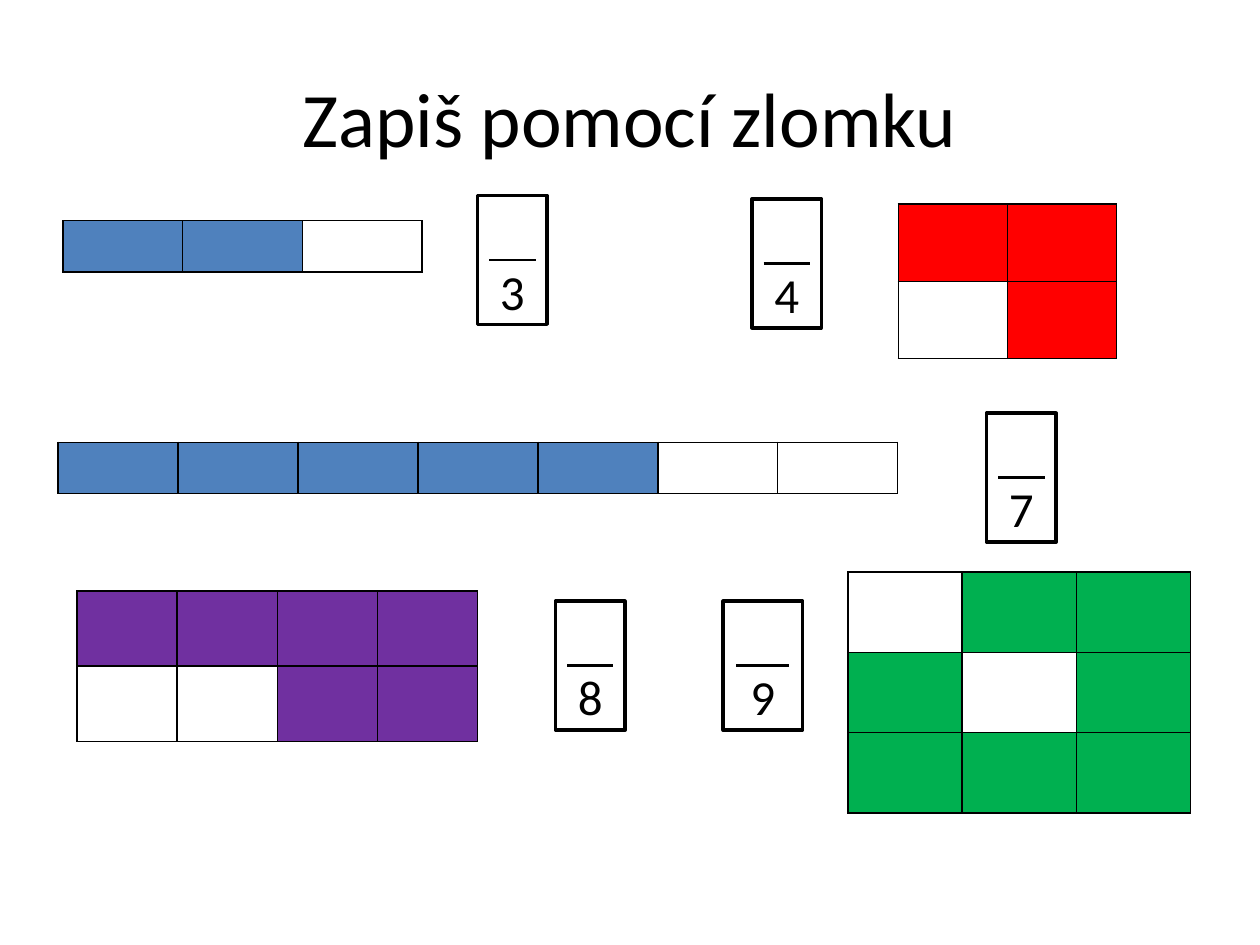
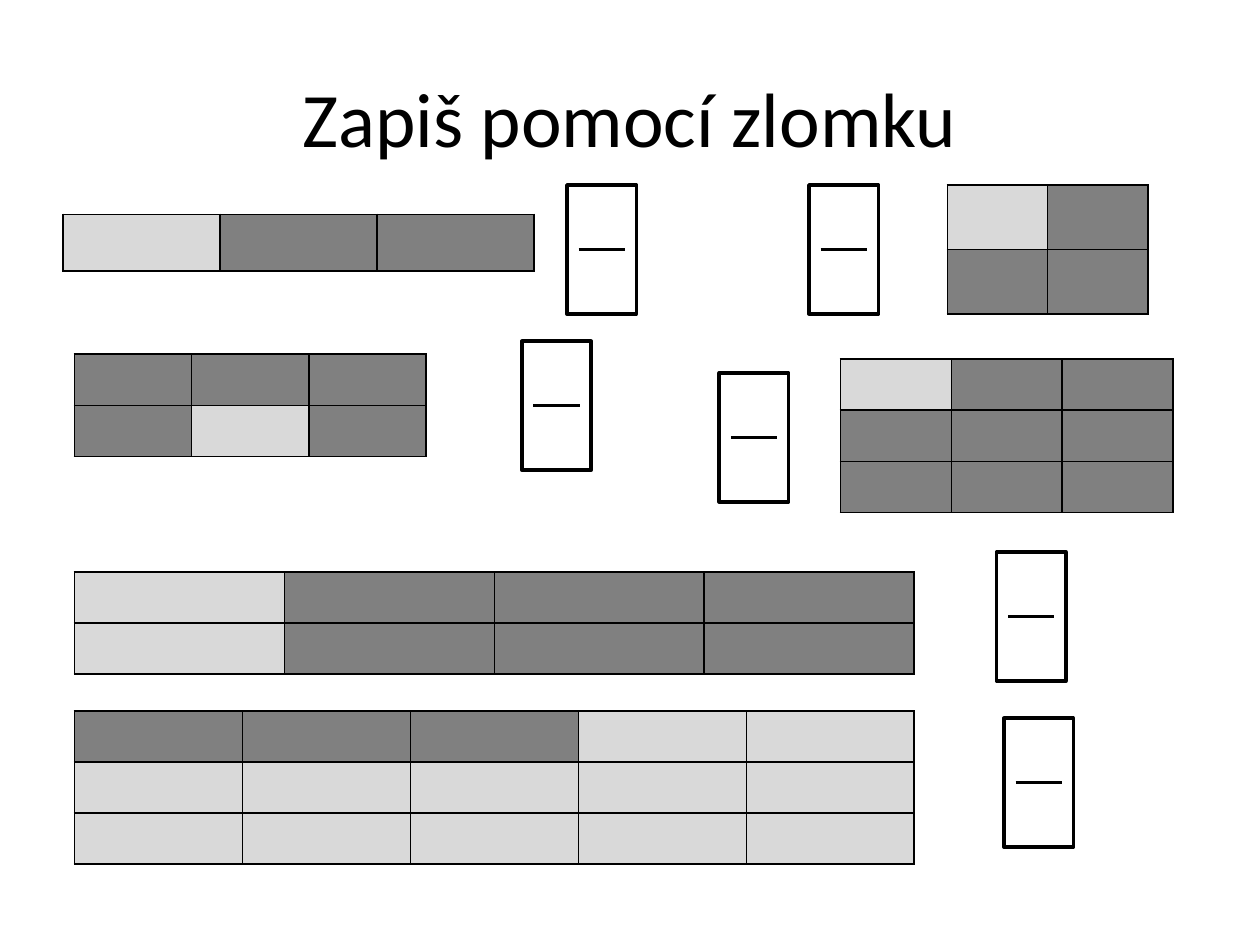
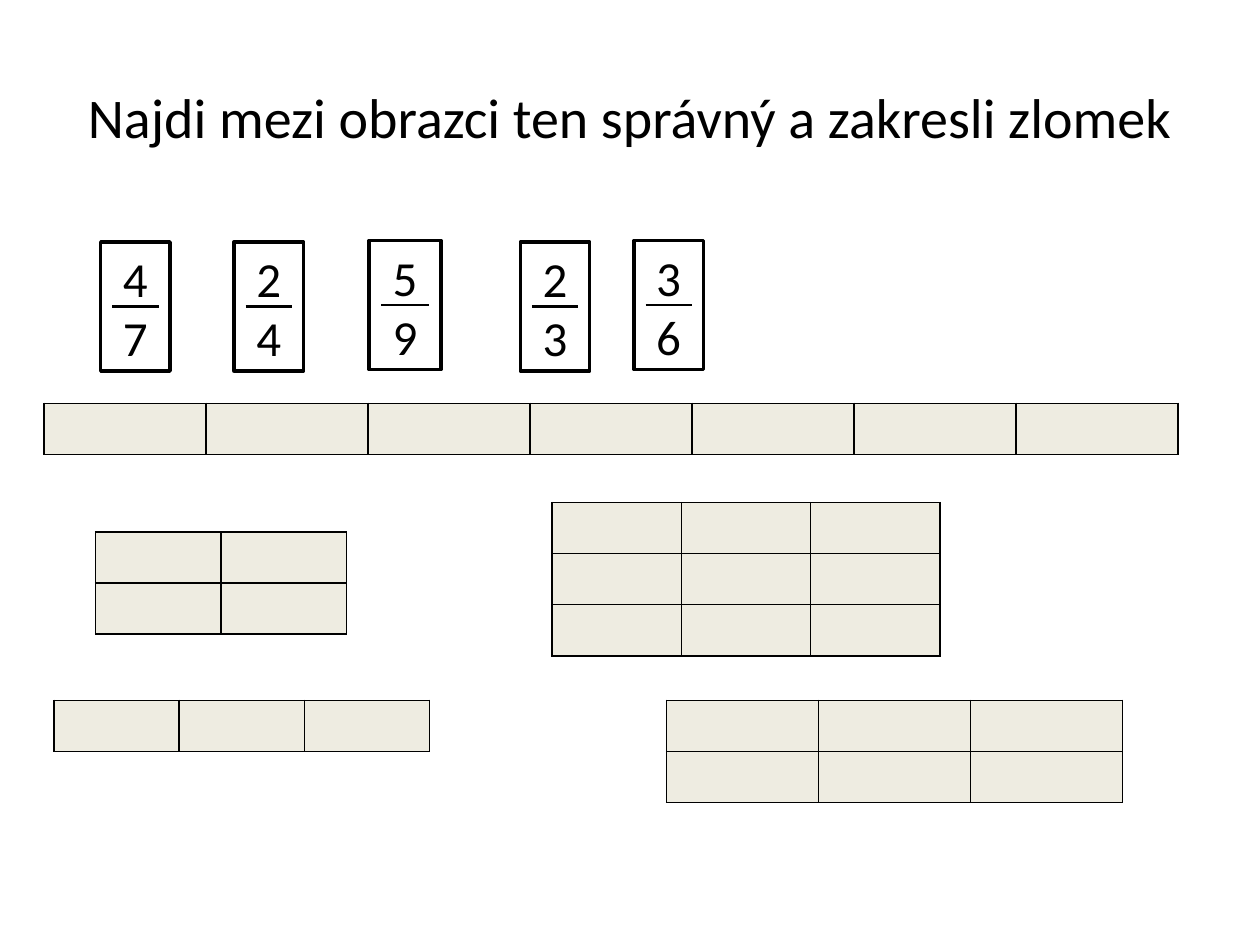
from pptx import Presentation
from pptx.dml.color import RGBColor
from pptx.enum.shapes import MSO_CONNECTOR, MSO_SHAPE
from pptx.enum.text import MSO_ANCHOR, PP_ALIGN
from pptx.oxml.ns import qn
from pptx.util import Cm, Pt
from lxml.etree import SubElement

FONT = "Calibri"
COLORS = {
    "black": "000000", "white": "FFFFFF", "blue": "4F81BD", "red": "FF0000",
    "purple": "7030A0", "green": "00B050", "dark": "808080", "light": "D9D9D9",
    "cream": "EEECE1",
}
ROW_H = 1.03            # usual height of a grid row, cm
BOX_W, BOX_H = 1.4, 2.6  # fraction box, cm


def rgb(name):
    return RGBColor.from_string(COLORS[name])


def add_run(p, text, size):
    p.alignment = PP_ALIGN.CENTER
    r = p.add_run()
    r.text = text
    r.font.name = FONT
    r.font.size = Pt(size)
    r.font.color.rgb = rgb("black")


def add_slide(prs, title, size=44):
    s = prs.slides.add_slide(prs.slide_layouts[5])
    sp = s.shapes.title
    sp.left, sp.top, sp.width, sp.height = Cm(1.27), Cm(0.76), Cm(22.86), Cm(3.18)
    tf = sp.text_frame
    tf.word_wrap = True
    tf.vertical_anchor = MSO_ANCHOR.MIDDLE
    add_run(tf.paragraphs[0], title, size)
    return s


def set_borders(cell):
    tcPr = cell._tc.get_or_add_tcPr()
    for side in ("a:lnL", "a:lnR", "a:lnT", "a:lnB"):
        ln = SubElement(tcPr, qn(side), w=str(Pt(1)))
        fill = SubElement(ln, qn("a:solidFill"))
        SubElement(fill, qn("a:srgbClr"), val=COLORS["black"])


def add_grid(s, x, y, w, pattern, on, off="white", row_h=ROW_H):
    """Draw a table from rows such as "##.", where # is a coloured part."""
    rows = pattern.split()
    n = len(rows[0])
    table = s.shapes.add_table(len(rows), n, Cm(x), Cm(y), Cm(w),
                               Cm(row_h * len(rows))).table
    table.first_row = table.horz_banding = False
    for col in table.columns:
        col.width = Cm(w / n)
    for i, marks in enumerate(rows):
        table.rows[i].height = Cm(row_h)
        for j, mark in enumerate(marks):
            cell = table.cell(i, j)
            set_borders(cell)
            cell.fill.solid()
            cell.fill.fore_color.rgb = rgb(on if mark == "#" else off)


def add_fraction(s, x, y, numbers="", w=BOX_W):
    """Draw a box with a fraction bar; numbers stand from the bottom up."""
    group = s.shapes.add_group_shape()
    sp = group.shapes.add_shape(MSO_SHAPE.RECTANGLE, Cm(x), Cm(y), Cm(w), Cm(BOX_H))
    sp.shadow.inherit = False
    sp.fill.solid()
    sp.fill.fore_color.rgb = rgb("white")
    sp.line.color.rgb = rgb("black")
    sp.line.width = Pt(2)
    tf = sp.text_frame
    tf.word_wrap = True
    tf.vertical_anchor = MSO_ANCHOR.BOTTOM
    tf.margin_left = tf.margin_right = tf.margin_top = 0
    tf.margin_bottom = Cm(0.09)
    for i, number in enumerate(numbers):
        p = tf.add_paragraph() if i else tf.paragraphs[0]
        add_run(p, number, 28)

    # Fraction bar
    mid = Cm(y + BOX_H / 2)
    bar = group.shapes.add_connector(MSO_CONNECTOR.STRAIGHT, Cm(x + w / 6), mid,
                                     Cm(x + w * 5 / 6), mid)
    bar.line.color.rgb = rgb("black")
    bar.line.width = Pt(1.5)
    SubElement(bar._element.spPr, qn("a:effectLst"))


def add_colour_slide(prs):
    s = add_slide(prs, "Zapiš pomocí zlomku")
    add_grid(s, 1.27, 4.45, 7.24, "##.", "blue")
    add_grid(s, 18.11, 4.11, 4.4, "## .#", "red", row_h=1.56)
    add_grid(s, 1.17, 8.92, 16.93, "#####..", "blue")
    add_grid(s, 1.55, 11.91, 8.08, "#### ..##", "purple", row_h=1.52)
    add_grid(s, 17.09, 11.53, 6.91, ".## #.# ###", "green", row_h=1.62)
    for x, y, number in ((9.63, 3.94, "3"), (15.16, 4.01, "4"),
                         (19.89, 8.33, "7"), (11.2, 12.12, "8")):
        add_fraction(s, x, y, number)
    add_fraction(s, 14.58, 12.12, "9", w=1.6)


def add_grey_slide(prs):
    s = add_slide(prs, "Zapiš pomocí zlomku")
    for x, y, w, pattern, row_h in (
            (1.27, 4.32, 9.5, ".##", 1.14),
            (19.1, 3.73, 4.04, ".# ##", 1.3),
            (1.5, 7.14, 7.09, "### #.#", ROW_H),
            (16.94, 7.24, 6.71, ".## ### ###", ROW_H),
            (1.5, 11.53, 16.93, ".### .###", ROW_H),
            (1.5, 14.33, 16.93, "###.. ..... .....", ROW_H)):
        add_grid(s, x, y, w, pattern, "dark", "light", row_h)
    for x, y in ((11.43, 3.73), (16.31, 3.73), (10.52, 6.88),
                 (14.5, 7.52), (20.09, 11.13), (20.24, 14.48)):
        add_fraction(s, x, y)


def add_search_slide(prs):
    s = add_slide(prs, "Najdi mezi obrazci ten správný a zakresli zlomek", 32)
    for x, y, numbers, w in ((2.03, 4.88, "47", BOX_W), (4.72, 4.88, "24", BOX_W),
                             (7.44, 4.85, "59", 1.45), (10.49, 4.88, "23", BOX_W),
                             (12.78, 4.85, "36", BOX_W)):
        add_fraction(s, x, y, numbers, w)
    for x, y, w, pattern in ((0.89, 8.13, 22.86, "#######"),
                             (1.93, 10.72, 5.05, "## ##"),
                             (11.13, 10.13, 7.82, "### ### ###"),
                             (1.09, 14.12, 7.57, "###"),
                             (13.44, 14.12, 9.19, "### ###")):
        add_grid(s, x, y, w, pattern, "cream")


def main():
    prs = Presentation()
    prs.slide_width, prs.slide_height = Cm(25.4), Cm(19.05)
    add_colour_slide(prs)
    add_grey_slide(prs)
    add_search_slide(prs)
    prs.save("out.pptx")


if __name__ == "__main__":
    main()
